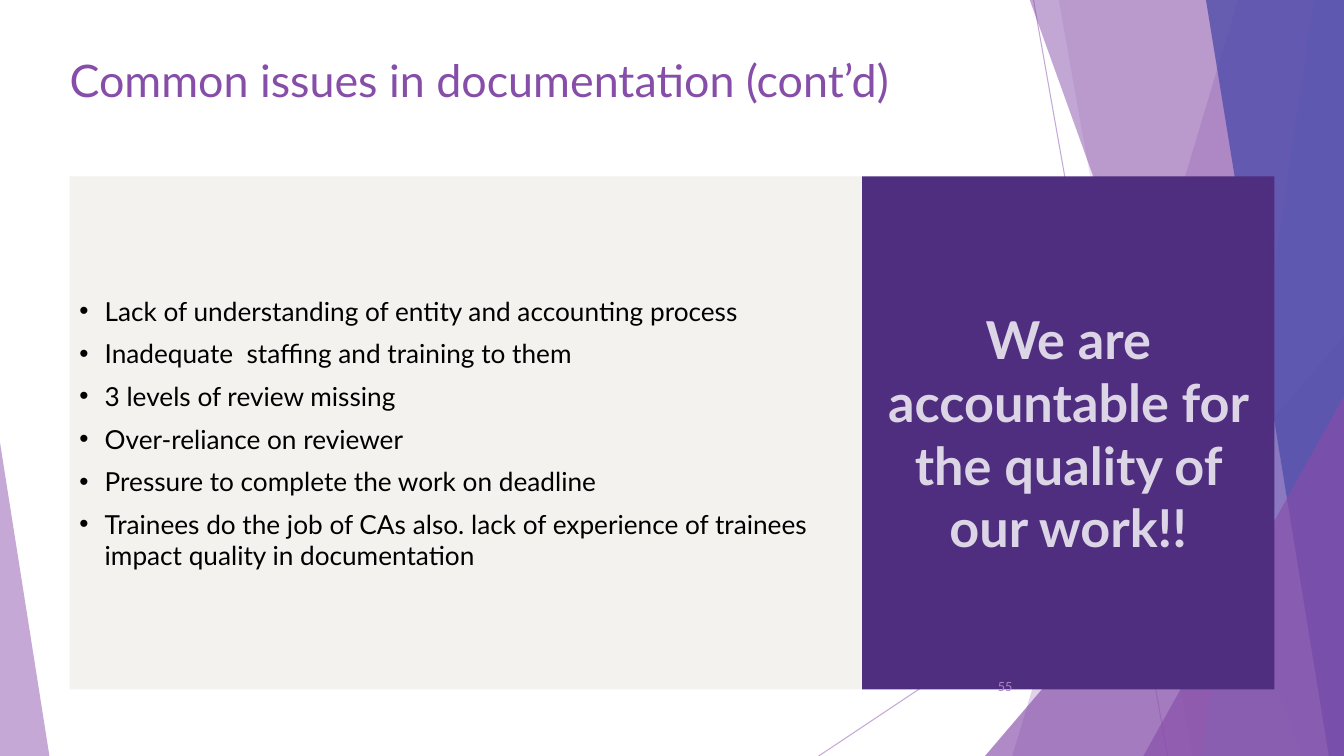
from lxml import etree
from pptx import Presentation
from pptx.dml.color import RGBColor
from pptx.enum.shapes import MSO_CONNECTOR, MSO_SHAPE
from pptx.enum.text import MSO_ANCHOR as ANCHOR, PP_ALIGN as ALIGN
from pptx.oxml.ns import qn
from pptx.util import Inches, Pt

LILAC = RGBColor(0xAD, 0x84, 0xC6)
VIOLET = RGBColor(0x87, 0x4E, 0xA9)
PERIWINKLE = RGBColor(0x87, 0x84, 0xC7)
INDIGO = RGBColor(0x52, 0x4E, 0xAB)
DEEP_PURPLE = RGBColor(0x4F, 0x2D, 0x7F)
PALE_LILAC = RGBColor(0xDC, 0xD5, 0xE5)
CREAM = RGBColor(0xF4, 0xF2, 0xEF)
BLACK = RGBColor(0, 0, 0)

WIDTH, HEIGHT, TOP = 13.33, 7.5, -0.01

prs = Presentation()
prs.slide_width, prs.slide_height = Inches(WIDTH), Inches(HEIGHT)
slide = prs.slides.add_slide(prs.slide_layouts[6])
shapes = slide.shapes


def paint(shape, color, opacity=100):
    shape.shadow.inherit = False
    shape.fill.solid()
    shape.fill.fore_color.rgb = color
    shape.line.fill.background()
    if opacity < 100:
        tint = shape.fill._xPr.find(qn("a:solidFill"))[0]
        etree.SubElement(tint, qn("a:alpha")).set("val", str(opacity * 1000))


def write(shape, lines, size, color, bold=False, align=ALIGN.LEFT,
          anchor=ANCHOR.MIDDLE, margin=None, bullet=False):
    frame = shape.text_frame
    frame.word_wrap = True
    frame.vertical_anchor = anchor
    if margin is not None:
        frame.margin_left = frame.margin_right = Inches(margin)
        frame.margin_top = frame.margin_bottom = Inches(margin)
    frame.text = "\n".join(lines)
    for paragraph in frame.paragraphs:
        paragraph.alignment = align
        font = paragraph.runs[0].font
        font.name, font.size, font.bold = "Lato", Pt(size), bold
        font.color.rgb = color
        if bullet:
            paragraph.space_after = Pt(8)
            props = paragraph._p.get_or_add_pPr()
            props.set("marL", str(Inches(0.25)))
            props.set("indent", str(Inches(-0.25)))
            etree.SubElement(props, qn("a:buFont")).set("typeface", "Arial")
            etree.SubElement(props, qn("a:buChar")).set("char", "•")


for x1, y1, x2, y2 in [(10.25, 0, 11.58, HEIGHT), (WIDTH, 4.03, 8.12, HEIGHT)]:
    ray = shapes.add_connector(MSO_CONNECTOR.STRAIGHT, Inches(x1), Inches(y1),
                               Inches(x2), Inches(y2))
    ray.line.color.rgb = LILAC
    ray.line.width = Pt(0.75)
    tint = ray.line.fill._xPr.find(qn("a:solidFill"))[0]
    etree.SubElement(tint, qn("a:alpha")).set("val", "70000")
    etree.SubElement(ray._element.spPr, qn("a:effectLst"))

facets = [
    ("band", 12.28, 10.04, LILAC, 36),
    ("band", 10.5, 11.83, LILAC, 20),
    ("triangle", 9.77, 3.33, VIOLET, 66),
    ("band", 10.21, 12.91, VIOLET, 50),
    ("band", 13.03, 11.92, PERIWINKLE, 70),
    ("band", 11.96, 13.18, INDIGO, 80),
    ("triangle", 11.34, 3.93, VIOLET, 66),
]
for kind, first, second, color, opacity in facets:
    if kind == "band":
        outline = shapes.build_freeform(Inches(first), Inches(TOP))
        corners = [(WIDTH, TOP), (WIDTH, HEIGHT), (second, HEIGHT)]
        outline.add_line_segments([(Inches(x), Inches(y)) for x, y in corners])
        facet = outline.convert_to_shape()
    else:
        facet = shapes.add_shape(MSO_SHAPE.ISOSCELES_TRIANGLE, Inches(first), Inches(second),
                                 Inches(WIDTH - first), Inches(HEIGHT - second))
        facet.adjustments[0] = 1
    paint(facet, color, opacity)

left_wedge = shapes.add_shape(MSO_SHAPE.ISOSCELES_TRIANGLE, 0, Inches(4.39),
                              Inches(0.49), Inches(3.11))
left_wedge.adjustments[0] = 0
paint(left_wedge, LILAC, 70)

issues = shapes.add_shape(MSO_SHAPE.RECTANGLE, Inches(0.69), Inches(1.75),
                          Inches(7.87), Inches(5.09))
paint(issues, CREAM)
write(issues, [
    "Lack of understanding of entity and accounting process",
    "Inadequate  staffing and training to them",
    "3 levels of review missing",
    "Over-reliance on reviewer",
    "Pressure to complete the work on deadline",
    "Trainees do the job of CAs also. lack of experience of trainees "
    "impact quality in documentation",
], 18.7, BLACK, bullet=True)

title = shapes.add_textbox(Inches(0.69), Inches(0.52), Inches(11.96), Inches(0.97))
write(title, ["Common issues in documentation (cont’d)"], 32, VIOLET,
      anchor=ANCHOR.TOP, margin=0)

message = shapes.add_shape(MSO_SHAPE.RECTANGLE, Inches(8.55), Inches(1.75),
                           Inches(4.09), Inches(5.09))
paint(message, DEEP_PURPLE)
write(message, ["We are accountable for the quality of our work!!"], 37.3, PALE_LILAC,
      bold=True, align=ALIGN.CENTER)

page_number = shapes.add_textbox(Inches(9.39), Inches(6.61), Inches(0.75), Inches(0.4))
write(page_number, ["55"], 9, LILAC, align=ALIGN.RIGHT)

prs.save("out.pptx")
